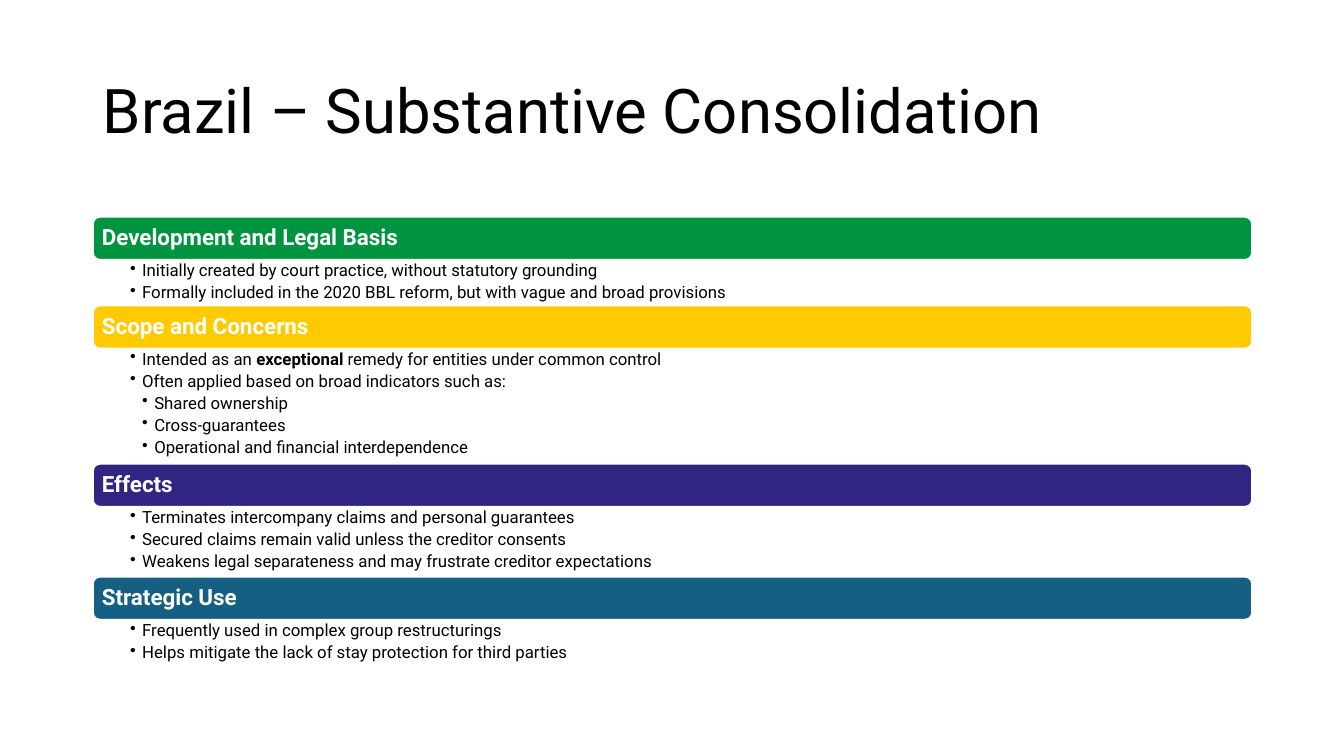
"""Build the slide on substantive consolidation in Brazil."""
from dataclasses import dataclass

import lxml.etree
import pptx
import pptx.dml.color
import pptx.enum.shapes
import pptx.enum.text
import pptx.oxml.ns
import pptx.util

Inches = pptx.util.Inches
Pt = pptx.util.Pt
COLORS = {
    "black": "000000",
    "white": "FFFFFF",
    "green": "009440",
    "yellow": "FFCB00",
    "indigo": "302681",
    "teal": "156082",
}
FONT = "Roboto"
LEFT, WIDTH = 0.92, 11.5
TOP, BAR_HEIGHT = 2.15, 0.43
INDENT = 0.12


@dataclass
class Run:
    text: str
    bold: bool = False


@dataclass
class Bullet:
    runs: list[Run]
    level: int = 1


@dataclass
class Section:
    heading: str
    color: str
    body_height: float
    bullets: list[Bullet]


def point(text: str, level: int = 1) -> Bullet:
    """Return a bullet made of one plain run."""
    return Bullet([Run(text)], level)


SECTIONS = [
    Section("Development and Legal Basis", "green", 0.45, [
        point("Initially created by court practice, without statutory grounding"),
        point("Formally included in the 2020 BBL reform, but with vague and broad provisions"),
    ]),
    Section("Scope and Concerns", "yellow", 1.14, [
        Bullet([
            Run("Intended as an "),
            Run("exceptional", bold=True),
            Run(" remedy for entities under common control"),
        ]),
        point("Often applied based on broad indicators such as:"),
        point("Shared ownership", 2),
        point("Cross-guarantees", 2),
        point("Operational and financial interdependence", 2),
    ]),
    Section("Effects", "indigo", 0.69, [
        point("Terminates intercompany claims and personal guarantees"),
        point("Secured claims remain valid unless the creditor consents"),
        point("Weakens legal separateness and may frustrate creditor expectations"),
    ]),
    Section("Strategic Use", "teal", 0.45, [
        point("Frequently used in complex group restructurings"),
        point("Helps mitigate the lack of stay protection for third parties"),
    ]),
]


def rgb(name: str) -> pptx.dml.color.RGBColor:
    """Return the named colour."""
    return pptx.dml.color.RGBColor.from_string(COLORS[name])


def add_run(p, run: Run, size: float, color: str) -> None:
    """Add a formatted run to a paragraph."""
    r = p.add_run()
    r.text = run.text
    r.font.name = FONT
    r.font.size = Pt(size)
    r.font.bold = run.bold
    r.font.color.rgb = rgb(color)


def set_frame(tf, left: float, right: float, edge: float, anchor) -> None:
    """Set the insets, wrapping and anchor of a text frame."""
    tf.word_wrap = True
    tf.auto_size = pptx.enum.text.MSO_AUTO_SIZE.NONE
    tf.vertical_anchor = anchor
    tf.margin_left, tf.margin_right = Inches(left), Inches(right)
    tf.margin_top = tf.margin_bottom = Inches(edge)


def set_paragraph(p) -> None:
    """Align a paragraph left with tight lines."""
    p.alignment = pptx.enum.text.PP_ALIGN.LEFT
    p.line_spacing = 0.9


def set_bullet(p, level: int) -> None:
    """Give a paragraph its level, hanging indent and bullet."""
    p.level = level
    p.space_before = Pt(0)
    p.space_after = Pt(2.8)
    pPr = p._p.get_or_add_pPr()
    pPr.set("marL", str(Inches(INDENT * level)))
    pPr.set("indent", str(-Inches(INDENT)))
    bu = lxml.etree.SubElement(pPr, pptx.oxml.ns.qn("a:buChar"))
    bu.set("char", "•")


def add_title(s, text: str) -> None:
    """Place and format the slide title."""
    sp = s.shapes.title
    sp.left, sp.top = Inches(LEFT), Inches(0.4)
    sp.width, sp.height = Inches(WIDTH), Inches(1.45)
    set_frame(sp.text_frame, 0.1, 0.1, 0.05, pptx.enum.text.MSO_ANCHOR.MIDDLE)
    p = sp.text_frame.paragraphs[0]
    set_paragraph(p)
    add_run(p, Run(text), 44, "black")


def add_bar(s, section: Section, top: float) -> None:
    """Draw the heading bar of a section."""
    sp = s.shapes.add_shape(
        pptx.enum.shapes.MSO_SHAPE.ROUNDED_RECTANGLE,
        Inches(LEFT), Inches(top), Inches(WIDTH), Inches(BAR_HEIGHT))
    sp.shadow.inherit = False
    sp.fill.solid()
    sp.fill.fore_color.rgb = rgb(section.color)
    sp.line.color.rgb = rgb("white")
    sp.line.width = Pt(1.5)
    set_frame(sp.text_frame, 0.07, 0.07, 0.07, pptx.enum.text.MSO_ANCHOR.MIDDLE)
    p = sp.text_frame.paragraphs[0]
    set_paragraph(p)
    add_run(p, Run(section.heading, bold=True), 16, "white")


def add_body(s, section: Section, top: float) -> None:
    """Add the bullets of a section."""
    sp = s.shapes.add_textbox(
        Inches(LEFT), Inches(top), Inches(WIDTH), Inches(section.body_height))
    tf = sp.text_frame
    set_frame(tf, 0.37, 0.12, 0.02, pptx.enum.text.MSO_ANCHOR.TOP)
    for i, bullet in enumerate(section.bullets):
        p = tf.add_paragraph() if i else tf.paragraphs[0]
        set_paragraph(p)
        set_bullet(p, bullet.level)
        for run in bullet.runs:
            add_run(p, run, 12, "black")


def main() -> None:
    """Build and save the presentation."""
    prs = pptx.Presentation()
    prs.slide_width, prs.slide_height = Inches(13.33), Inches(7.5)
    s = prs.slides.add_slide(prs.slide_layouts[5])
    add_title(s, "Brazil – Substantive Consolidation")
    top = TOP
    for section in SECTIONS:
        add_bar(s, section, top)
        add_body(s, section, top + BAR_HEIGHT)
        top += BAR_HEIGHT + section.body_height
    prs.save("out.pptx")


if __name__ == "__main__":
    main()
